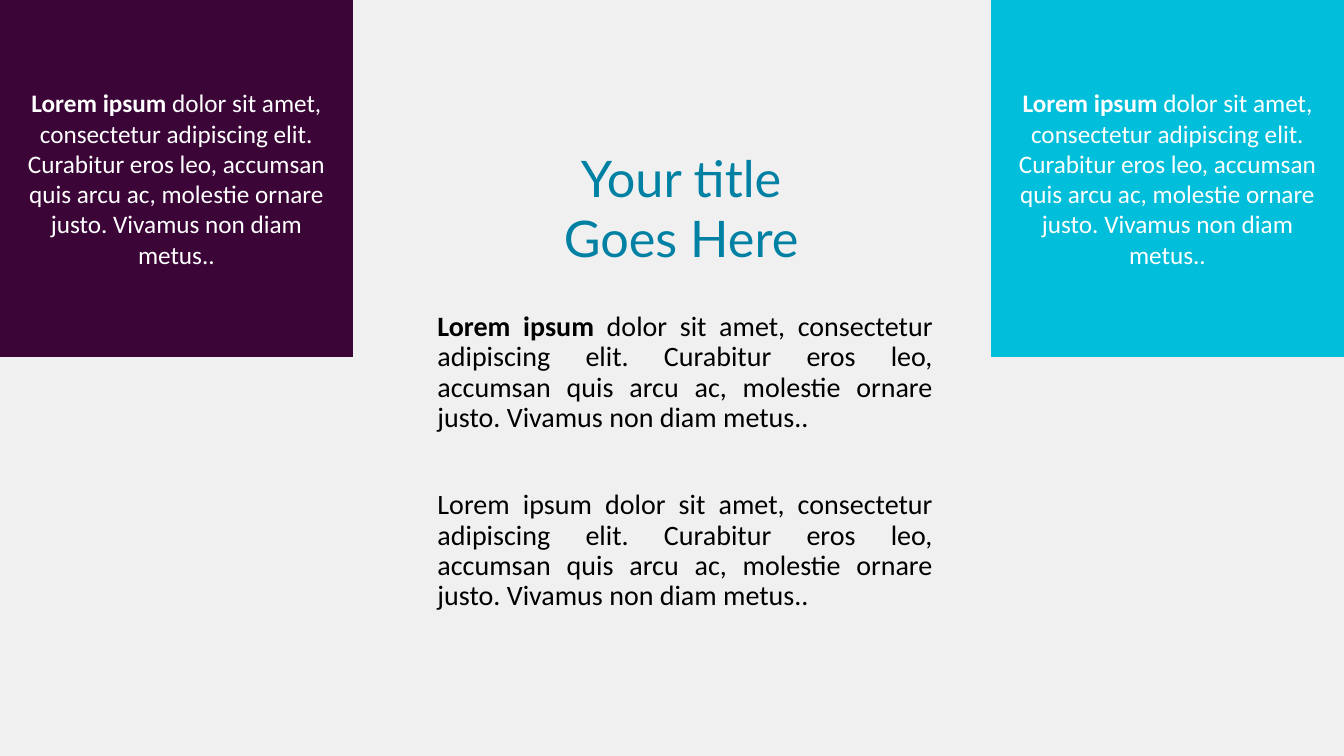
from pptx import Presentation
from pptx.dml.color import RGBColor
from pptx.enum.shapes import MSO_SHAPE
from pptx.enum.text import MSO_ANCHOR, PP_ALIGN
from pptx.util import Inches, Pt

SLIDE_W, SLIDE_H = 13.33, 7.5
PANEL_W, PANEL_H = 3.5, 3.54
COLORS = {
    "background": "F0F0F0",
    "plum": "3B0538",
    "cyan": "01BFDA",
    "title": "0081A4",
    "body": "000000",
    "white": "FFFFFF",
}
LEAD = "Lorem ipsum "
REST = ("dolor sit amet, consectetur adipiscing elit. Curabitur eros leo, "
        "accumsan quis arcu ac, molestie ornare justo. Vivamus non diam metus..")


def color(name):
    return RGBColor.from_string(COLORS[name])


def write(paragraph, parts, align, font, size, ink):
    """Fill a paragraph with (text, bold) parts in one style."""
    paragraph.alignment = align
    for text, bold in parts:
        run = paragraph.add_run()
        run.text = text
        run.font.name = font
        run.font.size = Pt(size)
        run.font.bold = bold
        run.font.color.rgb = color(ink)


def add_panel(slide, left, fill):
    panel = slide.shapes.add_shape(
        MSO_SHAPE.RECTANGLE, Inches(left), 0, Inches(PANEL_W), Inches(PANEL_H))
    panel.shadow.inherit = False
    panel.fill.solid()
    panel.fill.fore_color.rgb = color(fill)
    panel.line.fill.background()
    frame = panel.text_frame
    frame.word_wrap = True
    frame.vertical_anchor = MSO_ANCHOR.MIDDLE
    write(frame.paragraphs[0], [(LEAD, True), (REST, False)],
          PP_ALIGN.CENTER, "Calibri", 18, "white")


def add_text(slide, box, paragraphs, align, font, size, ink):
    """Add a text box and return its paragraphs."""
    frame = slide.shapes.add_textbox(*map(Inches, box)).text_frame
    frame.word_wrap = True
    for i, parts in enumerate(paragraphs):
        paragraph = frame.add_paragraph() if i else frame.paragraphs[0]
        write(paragraph, parts, align, font, size, ink)
    return frame.paragraphs


def main():
    prs = Presentation()
    prs.slide_width, prs.slide_height = Inches(SLIDE_W), Inches(SLIDE_H)
    slide = prs.slides.add_slide(prs.slide_layouts[6])
    slide.background.fill.solid()
    slide.background.fill.fore_color.rgb = color("background")

    # Corner panels
    add_panel(slide, 0, "plum")
    add_panel(slide, SLIDE_W - PANEL_W, "cyan")

    # Body copy
    body = add_text(slide, (4.24, 3.05, 5.11, 4.45),
                    [[(LEAD, True), (REST, False)], [(LEAD + REST, False)]],
                    PP_ALIGN.JUSTIFY, "Calibri", 20, "body")
    for paragraph, gap in zip(body, (10, 41)):
        paragraph.line_spacing = 0.9
        paragraph.space_before = Pt(gap)

    # Title
    add_text(slide, (4.05, 1.41, 5.54, 1.31),
             [[("Your title ", False)], [("Goes Here ", False)]],
             PP_ALIGN.CENTER, "Lato", 36, "title")

    prs.save("out.pptx")


if __name__ == "__main__":
    main()
